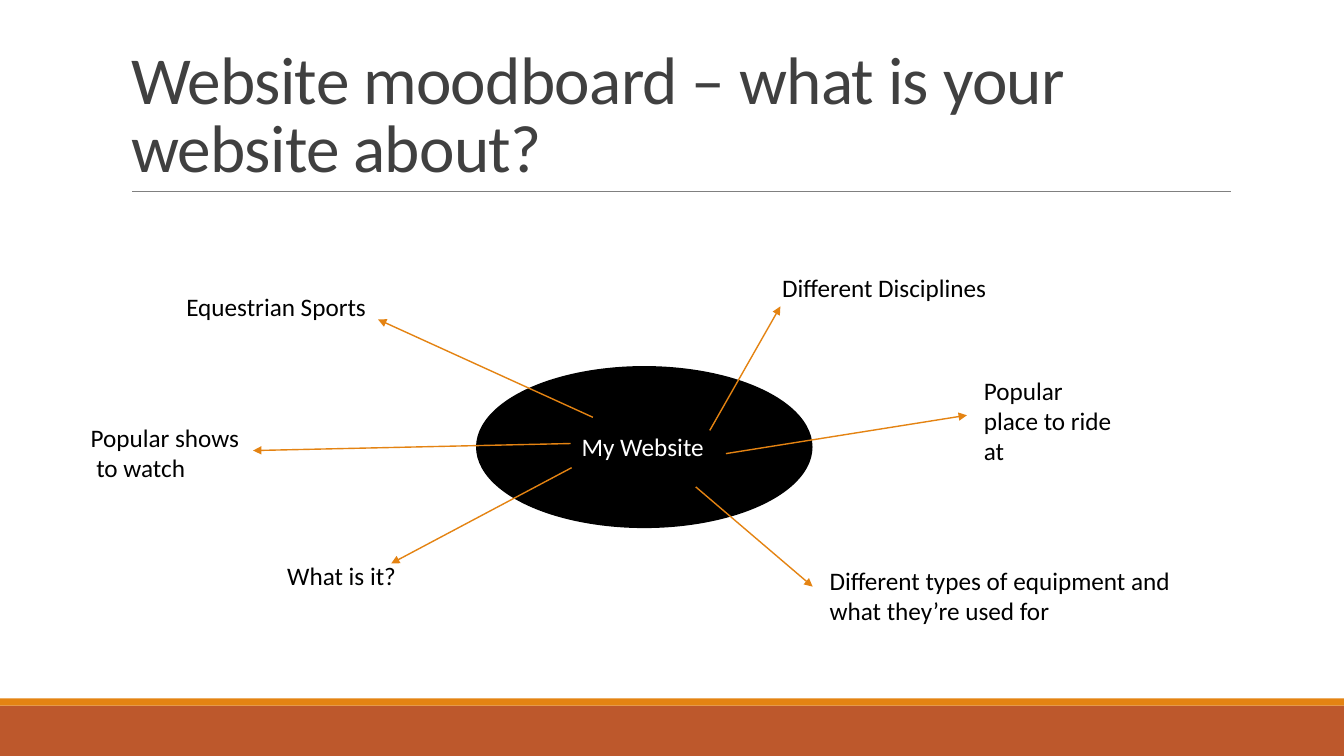
from dataclasses import dataclass

from pptx import Presentation
from pptx import util as u
from pptx.dml.color import RGBColor
from pptx.enum import shapes, text
from pptx.oxml import parse_xml
from pptx.oxml.ns import nsdecls, qn

EMU_PER_PX = 9144  # 100 px to the inch


@dataclass(frozen=True)
class Theme:
    font: str = "Calibri"
    title_size: int = 48
    body_size: int = 18
    title: str = "404040"
    ink: str = "000000"
    paper: str = "FFFFFF"
    rule: str = "808080"
    accent: str = "E48312"
    footer: str = "BD582C"


@dataclass(frozen=True)
class Box:
    left: int
    top: int
    width: int
    height: int

    def emu(self) -> tuple[u.Emu, ...]:
        return tuple(map(px, (self.left, self.top, self.width, self.height)))


@dataclass(frozen=True)
class Idea:
    """A label and the arrow that leads to it from the hub."""
    label: str
    box: Box
    start: tuple[int, int]
    tip: tuple[int, int]
    wrap: bool = False


THEME = Theme()
IDEAS = [
    Idea("Different Disciplines", Box(766, 265, 231, 40), (704, 427), (774, 304)),
    Idea("What is it?", Box(275, 551, 135, 40), (567, 464), (388, 559)),
    Idea("Equestrian Sports", Box(175, 284, 200, 40), (588, 414), (375, 317)),
    Idea("Different types of equipment and what they’re used for",
         Box(813, 556, 368, 71), (690, 483), (806, 582), wrap=True),
    Idea("Popular shows\n to watch", Box(80, 414, 169, 71), (566, 440), (251, 447)),
    Idea("Popular place to ride at", Box(966, 367, 150, 101), (720, 450), (959, 412), wrap=True),
]


def px(length: int) -> u.Emu:
    return u.Emu(length * EMU_PER_PX)


def rgb(colour: str) -> RGBColor:
    return RGBColor.from_string(colour)


def style_text(frame, size: int, colour: str) -> None:
    for paragraph in frame.paragraphs:
        for run in paragraph.runs:
            run.font.name = THEME.font
            run.font.size = u.Pt(size)
            run.font.color.rgb = rgb(colour)


def add_solid(slide, kind, box: Box, colour: str):
    solid = slide.shapes.add_shape(kind, *box.emu())
    solid.shadow.inherit = False
    solid.fill.solid()
    solid.fill.fore_color.rgb = rgb(colour)
    solid.line.fill.background()
    return solid


def add_line(slide, start: tuple[int, int], end: tuple[int, int],
             colour: str, weight: float, arrow: bool = False) -> None:
    line = slide.shapes.add_connector(
        shapes.MSO_CONNECTOR.STRAIGHT, *map(px, start + end))
    line.line.color.rgb = rgb(colour)
    line.line.width = u.Pt(weight)
    if arrow:
        line.line._get_or_add_ln().append(
            parse_xml(f'<a:tailEnd {nsdecls("a")} type="triangle"/>'))
    line._element.spPr.append(parse_xml(f'<a:effectLst {nsdecls("a")}/>'))


def add_label(slide, words: str, box: Box, colour: str, wrap: bool) -> None:
    frame = slide.shapes.add_textbox(*box.emu()).text_frame
    frame.word_wrap = wrap
    frame.auto_size = text.MSO_AUTO_SIZE.SHAPE_TO_FIT_TEXT
    frame.text = words
    style_text(frame, THEME.body_size, colour)


def set_title(slide, words: str, box: Box) -> None:
    title = slide.shapes.title
    title.left, title.top, title.width, title.height = box.emu()
    frame = title.text_frame
    frame.text = words
    frame.word_wrap = True
    frame.auto_size = text.MSO_AUTO_SIZE.NONE
    frame.vertical_anchor = text.MSO_ANCHOR.BOTTOM
    heading = frame.paragraphs[0]
    heading.alignment = text.PP_ALIGN.LEFT
    heading.line_spacing = 0.85
    style_text(frame, THEME.title_size, THEME.title)
    for run in heading.runs:
        run._r.find(qn("a:rPr")).set("spc", "-50")


def add_hub(slide) -> None:
    hub = add_solid(slide, shapes.MSO_SHAPE.OVAL, Box(473, 364, 332, 159), THEME.ink)
    hub.line.color.rgb = rgb(THEME.ink)
    hub.line.width = u.Pt(1.25)
    add_label(slide, "My Website", Box(567, 423, 337, 40), THEME.paper, wrap=True)


def main() -> None:
    deck = Presentation()
    deck.slide_width, deck.slide_height = u.Inches(13.33), u.Inches(7.5)
    slide = deck.slides.add_slide(deck.slide_layouts[5])
    slide.background.fill.solid()
    slide.background.fill.fore_color.rgb = rgb(THEME.paper)

    add_solid(slide, shapes.MSO_SHAPE.RECTANGLE, Box(0, 700, 1333, 50), THEME.footer)
    add_solid(slide, shapes.MSO_SHAPE.RECTANGLE, Box(0, 693, 1333, 7), THEME.accent)
    add_line(slide, (131, 190), (1221, 190), THEME.rule, 0.5)
    set_title(slide, "Website moodboard – what is your website about?",
              Box(120, 31, 1100, 159))

    add_hub(slide)
    for idea in IDEAS:
        add_line(slide, idea.start, idea.tip, THEME.accent, 1, arrow=True)
        add_label(slide, idea.label, idea.box, THEME.ink, idea.wrap)

    deck.save("out.pptx")


if __name__ == "__main__":
    main()
